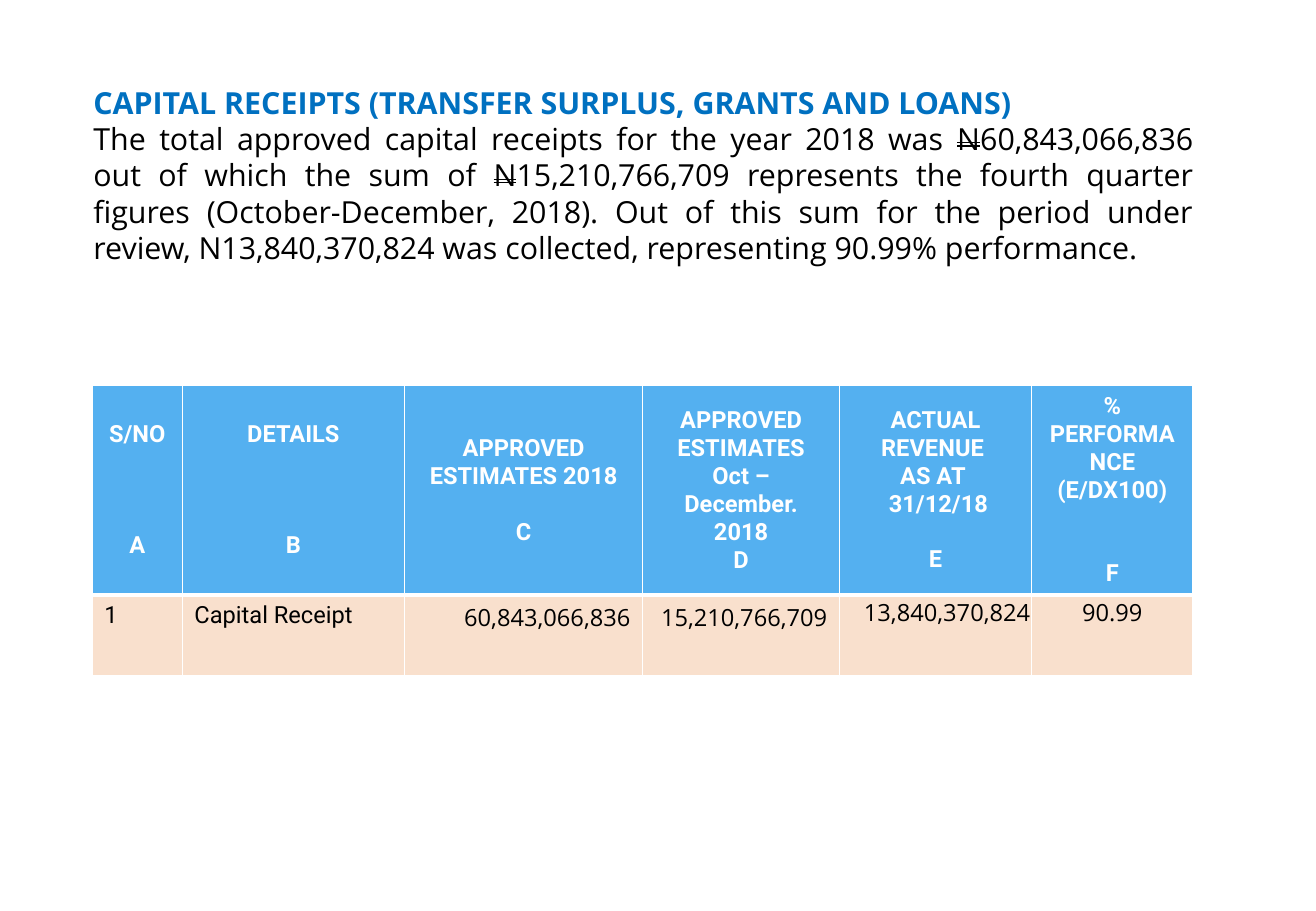
from dataclasses import dataclass

from lxml.etree import SubElement
from pptx import Presentation
from pptx.dml.color import RGBColor
from pptx.enum.text import MSO_ANCHOR as Anchor, MSO_AUTO_SIZE as AutoSize, PP_ALIGN as Align
from pptx.oxml.ns import qn
from pptx.util import Inches, Pt

WHITE = RGBColor(0xFF, 0xFF, 0xFF)
BLACK = RGBColor(0x00, 0x00, 0x00)
TITLE_BLUE = RGBColor(0x00, 0x70, 0xC0)
HEADER_BLUE = RGBColor(0x54, 0xB0, 0xF0)
ROW_PEACH = RGBColor(0xF9, 0xE0, 0xCD)
OPEN_SANS, ROBOTO = "Open Sans", "Roboto"
HEADER_LINE = 16.5  # points per line of 14 pt Roboto
DEFAULT_MARGINS = (0.1, 0.05, 0.1, 0.05)
HEADER_MARGINS = (0.11, 0.05, 0.11, 0.05)
TIGHT_MARGINS = (0.01, 0.01, 0.01, 0)


@dataclass(frozen=True)
class Column:
    width: float
    heading: tuple[str, ...]
    letter: str
    gap_lines: int  # empty lines above the letter
    value: str
    font: str = OPEN_SANS
    align: Align = Align.RIGHT
    margins: tuple[float, ...] = DEFAULT_MARGINS


COLUMNS = [
    Column(0.74, ("S/NO",), "A", 3, "1", ROBOTO, Align.LEFT),
    Column(1.83, ("DETAILS",), "B", 3, "Capital Receipt", ROBOTO, Align.LEFT),
    Column(1.96, ("APPROVED ESTIMATES 2018",), "C", 1, "60,843,066,836"),
    Column(1.62, ("APPROVED ESTIMATES Oct – December. 2018",), "D", 0, "15,210,766,709"),
    Column(1.58, ("ACTUAL REVENUE ", "AS AT ", " 31/12/18"), "E", 1, "13,840,370,824",
           margins=TIGHT_MARGINS),
    Column(1.33, ("% PERFORMANCE (E/DX100)",), "F", 2, "90.99",
           align=Align.CENTER, margins=TIGHT_MARGINS),
]
ROW_HEIGHTS = (1.73, 0.66)

TITLE = "CAPITAL RECEIPTS (TRANSFER SURPLUS, GRANTS AND LOANS)"
SUMMARY = [
    ("The total approved capital receipts for the year 2018 was ", False),
    ("N", True),
    ("60,843,066,836 out of which the sum of ", False),
    ("N", True),
    ("15,210,766,709 represents the fourth quarter figures (October-December, 2018). "
     "Out of this sum for the period under review, N13,840,370,824 was collected, "
     "representing 90.99% performance.", False),
]


def add_text(paragraph, text: str, *, font: str, size: float, color: RGBColor,
             bold: bool = False, struck: bool = False, align: Align = Align.LEFT,
             space_before: float = 0) -> None:
    paragraph.alignment = align
    paragraph.space_before = Pt(space_before)
    run = paragraph.add_run()
    run.text = text
    run.font.name, run.font.size, run.font.bold = font, Pt(size), bold
    run.font.color.rgb = color
    if struck:
        run._r.get_or_add_rPr().set("strike", "dblStrike")


def style_cell(cell, fill: RGBColor, margins: tuple[float, ...], anchor: Anchor,
               top: float, bottom: float) -> None:
    cell.vertical_anchor = anchor
    cell.margin_left, cell.margin_top, cell.margin_right, cell.margin_bottom = map(Inches, margins)
    properties = cell._tc.get_or_add_tcPr()
    for side, width in (("L", 1), ("R", 1), ("T", top), ("B", bottom)):
        line = SubElement(properties, qn(f"a:ln{side}"), w=str(Pt(width)))
        SubElement(SubElement(line, qn("a:solidFill")), qn("a:srgbClr"), val=str(WHITE))
    cell.fill.solid()
    cell.fill.fore_color.rgb = fill


def add_summary(slide) -> None:
    box = slide.shapes.add_textbox(Inches(0.67), Inches(0.64), Inches(9.25), Inches(2.52))
    frame = box.text_frame
    frame.word_wrap = True
    frame.auto_size = AutoSize.SHAPE_TO_FIT_TEXT
    add_text(frame.paragraphs[0], TITLE, font=OPEN_SANS, size=18, color=TITLE_BLUE,
             bold=True, align=Align.JUSTIFY)
    paragraph = frame.add_paragraph()
    for text, struck in SUMMARY:
        add_text(paragraph, text, font=OPEN_SANS, size=18, color=BLACK,
                 struck=struck, align=Align.JUSTIFY)


def add_receipts_table(slide) -> None:
    width = sum(column.width for column in COLUMNS)
    table = slide.shapes.add_table(len(ROW_HEIGHTS), len(COLUMNS), Inches(0.76), Inches(3.17),
                                   Inches(width), Inches(sum(ROW_HEIGHTS))).table
    for row, height in zip(table.rows, ROW_HEIGHTS):
        row.height = Inches(height)
    for index, column in enumerate(COLUMNS):
        table.columns[index].width = Inches(column.width)

        # Heading with the column letter below it
        header = table.cell(0, index)
        style_cell(header, HEADER_BLUE, HEADER_MARGINS, Anchor.MIDDLE, top=1, bottom=3)
        lines = [(text, 0) for text in column.heading] + [(column.letter, column.gap_lines)]
        frame = header.text_frame
        for number, (text, gap) in enumerate(lines):
            paragraph = frame.add_paragraph() if number else frame.paragraphs[0]
            add_text(paragraph, text, font=ROBOTO, size=14, color=WHITE, bold=True,
                     align=Align.CENTER, space_before=gap * HEADER_LINE)

        # Value
        cell = table.cell(1, index)
        style_cell(cell, ROW_PEACH, column.margins, Anchor.TOP, top=3, bottom=1)
        add_text(cell.text_frame.paragraphs[0], column.value, font=column.font, size=14,
                 color=BLACK, align=column.align)


def main() -> None:
    presentation = Presentation()
    presentation.slide_width, presentation.slide_height = Inches(10.83), Inches(7.5)
    slide = presentation.slides.add_slide(presentation.slide_layouts[6])
    add_summary(slide)
    add_receipts_table(slide)
    presentation.save("out.pptx")


if __name__ == "__main__":
    main()
